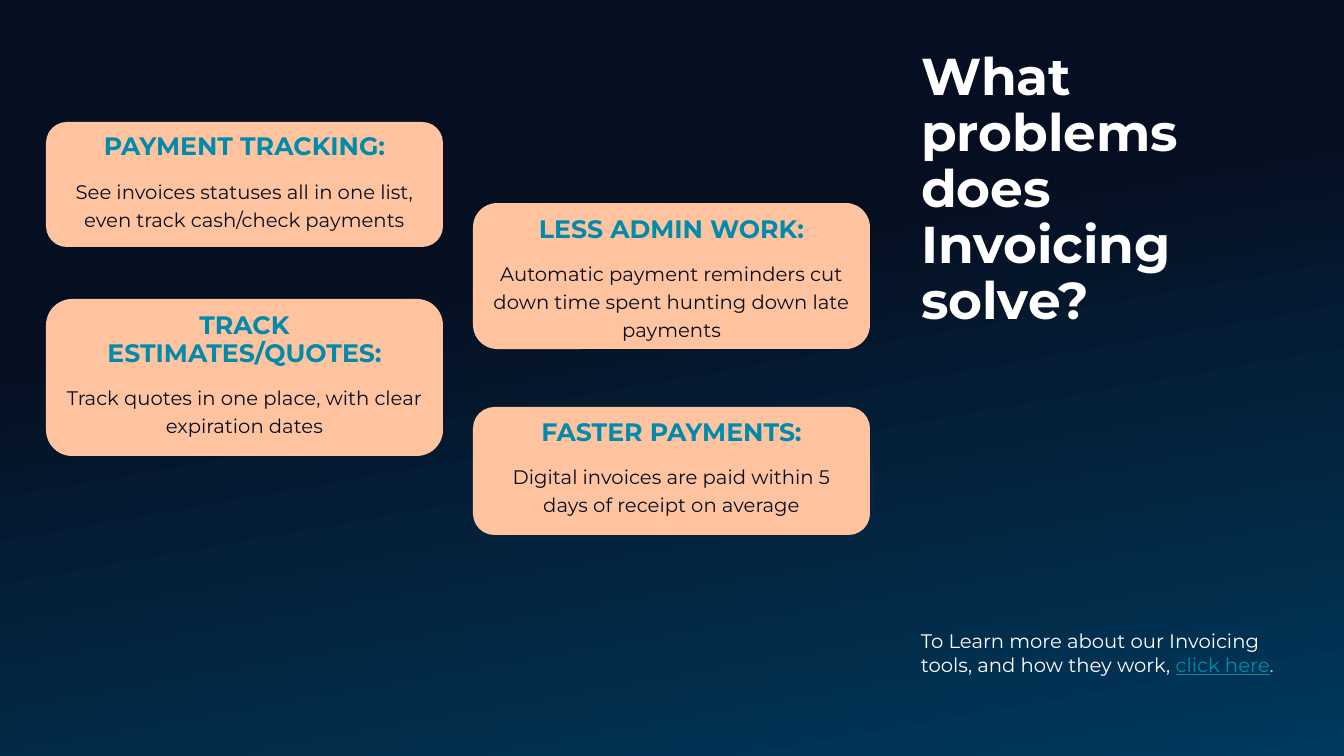
from pptx import Presentation
from pptx.dml.color import RGBColor
from pptx.enum.shapes import MSO_SHAPE
from pptx.enum.text import MSO_ANCHOR, MSO_AUTO_SIZE, PP_ALIGN
from pptx.util import Emu, Pt

PX = 9071  # EMU in one px, at 100.8 px to the inch
FONT = "Montserrat"
NAVY, BLUE, TEAL = "060E21", "003A5D", "008AAB"
PEACH, PALE_BLUE, WHITE = "FFC49F", "95D4E9", "FFFFFF"

CARD_WIDTH = 397
LEFT_COLUMN, MIDDLE_COLUMN, RIGHT_COLUMN = 46, 473, 911
CARDS = [
    (LEFT_COLUMN, 122, 125, "PAYMENT TRACKING:",
     "See invoices statuses all in one list, even track cash/check payments"),
    (MIDDLE_COLUMN, 203, 146, "LESS ADMIN WORK:",
     "Automatic payment reminders cut down time spent hunting down late payments"),
    (LEFT_COLUMN, 299, 157, "TRACK ESTIMATES/QUOTES:",
     "Track quotes in one place, with clear expiration dates"),
    (MIDDLE_COLUMN, 407, 128, "FASTER PAYMENTS:",
     "Digital invoices are paid within 5 days of receipt on average"),
]


def px(*lengths):
    return [Emu(length * PX) for length in lengths]


def color(value):
    return RGBColor.from_string(value)


def style_font(font, size, value, bold=False):
    font.name = FONT
    font.size = Pt(size)
    font.bold = bold
    font.color.rgb = color(value)


def set_background(slide):
    fill = slide.background.fill
    fill.gradient()
    fill.gradient_angle = 280
    for stop, position, value in zip(fill.gradient_stops, (0.35, 1), (NAVY, BLUE)):
        stop.position = position
        stop.color.rgb = color(value)


def set_title(slide, text):
    title = slide.shapes.title
    title.left, title.top, title.width, title.height = px(RIGHT_COLUMN, 46, CARD_WIDTH, 125)
    frame = title.text_frame
    frame.text = text
    frame.word_wrap = True
    frame.auto_size = MSO_AUTO_SIZE.NONE
    frame.vertical_anchor = MSO_ANCHOR.TOP
    paragraph = frame.paragraphs[0]
    paragraph.alignment = PP_ALIGN.LEFT
    paragraph.line_spacing = 0.9
    style_font(paragraph.font, 37, WHITE, bold=True)


def add_card(slide, left, top, height, heading, body):
    card = slide.shapes.add_shape(
        MSO_SHAPE.ROUNDED_RECTANGLE, *px(left, top, CARD_WIDTH, height))
    card.shadow.inherit = False
    card.fill.solid()
    card.fill.fore_color.rgb = color(PEACH)
    card.line.fill.background()
    frame = card.text_frame
    frame.word_wrap = True
    frame.vertical_anchor = MSO_ANCHOR.TOP
    frame.text = f"{heading}\n{body}"
    heading_paragraph, body_paragraph = frame.paragraphs
    for paragraph in frame.paragraphs:
        paragraph.alignment = PP_ALIGN.CENTER
        paragraph.line_spacing = Pt(20)
    body_paragraph.space_before = Pt(10)
    style_font(heading_paragraph.font, 18, TEAL, bold=True)
    style_font(body_paragraph.font, 14, NAVY)


def add_learn_more(slide):
    box = slide.shapes.add_textbox(*px(RIGHT_COLUMN, 624, CARD_WIDTH, 57))
    frame = box.text_frame
    frame.word_wrap = True
    paragraph = frame.paragraphs[0]
    for text, value, underline in (
        ("To Learn more about our Invoicing tools, and how they work, ", WHITE, False),
        ("click here", TEAL, True),
        (".", PALE_BLUE, False),
    ):
        run = paragraph.add_run()
        run.text = text
        style_font(run.font, 14, value)
        run.font.underline = underline


def main():
    presentation = Presentation()
    presentation.slide_width, presentation.slide_height = px(1344, 756)
    slide = presentation.slides.add_slide(presentation.slide_layouts[5])
    set_background(slide)
    set_title(slide, "What problems does Invoicing solve?")
    for card in CARDS:
        add_card(slide, *card)
    add_learn_more(slide)
    presentation.save("out.pptx")


if __name__ == "__main__":
    main()
